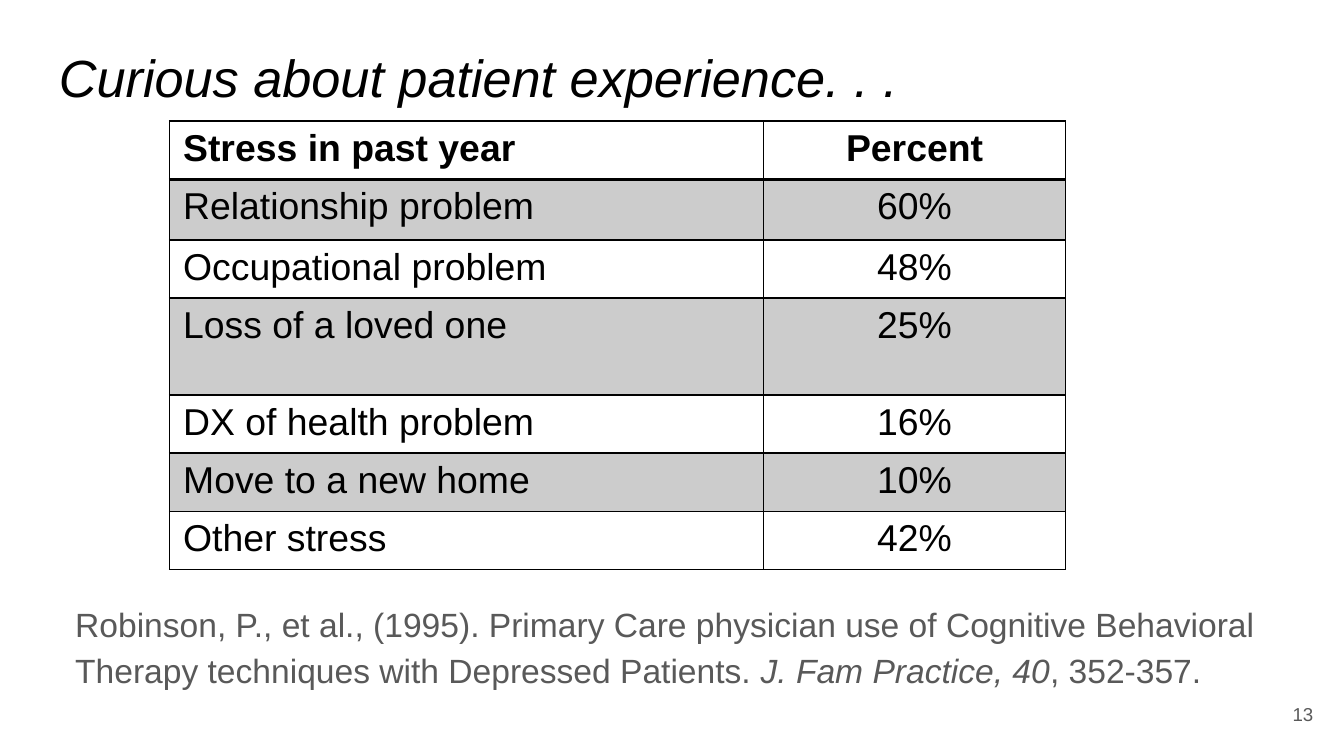
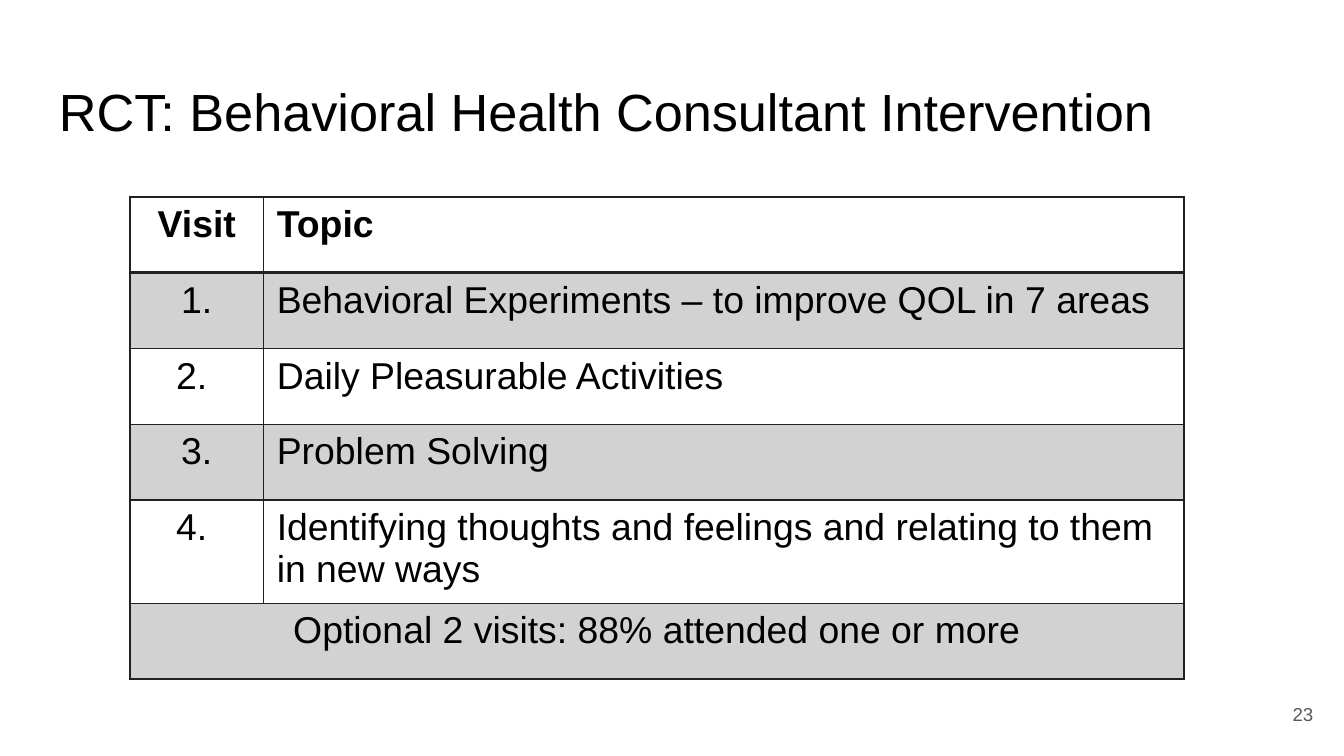
from lxml.etree import SubElement
from pptx import Presentation
from pptx.dml.color import RGBColor
from pptx.enum.text import MSO_ANCHOR, PP_ALIGN
from pptx.oxml.ns import qn
from pptx.util import Pt

FONT = "Arial"
BLACK, GRAY, CHARCOAL = "000000", "595959", "212121"
LEFT, CENTER, RIGHT = PP_ALIGN.LEFT, PP_ALIGN.CENTER, PP_ALIGN.RIGHT


def color(value):
    return RGBColor.from_string(value)


def write(tf, text, size=20, fill=BLACK, bold=False, italic=False, align=LEFT, spacing=None):
    tf.word_wrap = True
    p = tf.paragraphs[0]
    p.alignment = align
    if spacing:
        p.line_spacing = spacing
    r = p.add_run()
    r.text = text
    r.font.name = FONT
    r.font.size = Pt(size)
    r.font.bold = bold
    r.font.italic = italic
    r.font.color.rgb = color(fill)


stress_rows = [
    ("Stress in past year", "Percent"),
    ("Relationship problem", "60%"),
    ("Occupational problem", "48%"),
    ("Loss of a loved one", "25%"),
    ("DX of health problem", "16%"),
    ("Move to a new home", "10%"),
    ("Other stress", "42%"),
]
visit_rows = [
    ("Visit", "Topic"),
    ("1.", "Behavioral Experiments – to improve QOL in 7 areas"),
    ("2. ", "Daily Pleasurable Activities"),
    ("3.", "Problem Solving"),
    ("4. ", "Identifying thoughts and feelings and relating to them in new ways"),
    ("Optional 2 visits: 88% attended one or more",),
]
pages = [
    dict(title="Curious about patient experience. . .", italic=True, title_top=17.3, number="13",
         left=90.9, top=64.8, widths=[318.2, 161.8], heights=[29.6, 32.4, 29.6, 51.8, 29.6, 29.6, 29.6],
         aligns=[LEFT, CENTER], ink=BLACK, rows=stress_rows),
    dict(title="RCT: Behavioral Health Consultant Intervention", italic=False, title_top=35.3, number="23",
         left=69.8, top=105.6, widths=[71.3, 493.2], heights=[40.6] * 4 + [51.8, 40.6],
         aligns=[CENTER, LEFT], ink=CHARCOAL, rows=visit_rows),
]

prs = Presentation()
prs.slide_width, prs.slide_height = Pt(720), Pt(405)

for page in pages:
    s = prs.slides.add_slide(prs.slide_layouts[6])

    tf = s.shapes.add_textbox(Pt(24.5), Pt(page["title_top"]), Pt(671), Pt(45.4)).text_frame
    tf.margin_top = tf.margin_bottom = Pt(7.2)
    write(tf, page["title"], size=28, italic=page["italic"])

    tf = s.shapes.add_textbox(Pt(667.4), Pt(367.2), Pt(43.2), Pt(31)).text_frame
    tf.margin_top = tf.margin_bottom = Pt(7.2)
    tf.vertical_anchor = MSO_ANCHOR.MIDDLE
    write(tf, page["number"], size=10, fill=GRAY, align=RIGHT)

    rows, widths, heights = page["rows"], page["widths"], page["heights"]
    table = s.shapes.add_table(len(rows), len(widths), Pt(page["left"]), Pt(page["top"]),
                               Pt(sum(widths)), Pt(sum(heights))).table
    table.first_row = table.horz_banding = False
    for column, width in zip(table.columns, widths):
        column.width = Pt(width)
    for i, (row, height) in enumerate(zip(rows, heights)):
        table.rows[i].height = Pt(height)
        if len(row) == 1:
            table.cell(i, 0).merge(table.cell(i, 1))
        for j, cell in enumerate(table.rows[i].cells):
            tcPr = cell._tc.get_or_add_tcPr()
            for side in "LRTB":
                heavy = (i, side) in [(0, "B"), (1, "T")]
                ln = SubElement(tcPr, qn(f"a:ln{side}"), w=str(Pt(2 if heavy else 1)))
                SubElement(SubElement(ln, qn("a:solidFill")), qn("a:srgbClr"), val=page["ink"])
            if i % 2:
                cell.fill.solid()
                cell.fill.fore_color.rgb = color(page["ink"])
                SubElement(tcPr.find(qn("a:solidFill"))[0], qn("a:alpha"), val="20000")
            else:
                cell.fill.background()
            if j < len(row):
                write(cell.text_frame, row[j], bold=i == 0, align=page["aligns"][j])

tf = prs.slides[0].shapes.add_textbox(Pt(24.5), Pt(313), Pt(658), Pt(61)).text_frame
tf.margin_top = tf.margin_bottom = Pt(7.2)
tf.margin_left = Pt(15.8)
for text, italic in [
    ("Robinson, P., et al., (1995). Primary Care physician use of Cognitive Behavioral "
     "Therapy techniques with Depressed Patients. ", False),
    ("J. Fam Practice, 40", True),
    (", 352-357.", False),
]:
    write(tf, text, size=18, fill=GRAY, italic=italic, spacing=1.15)

prs.save("out.pptx")
